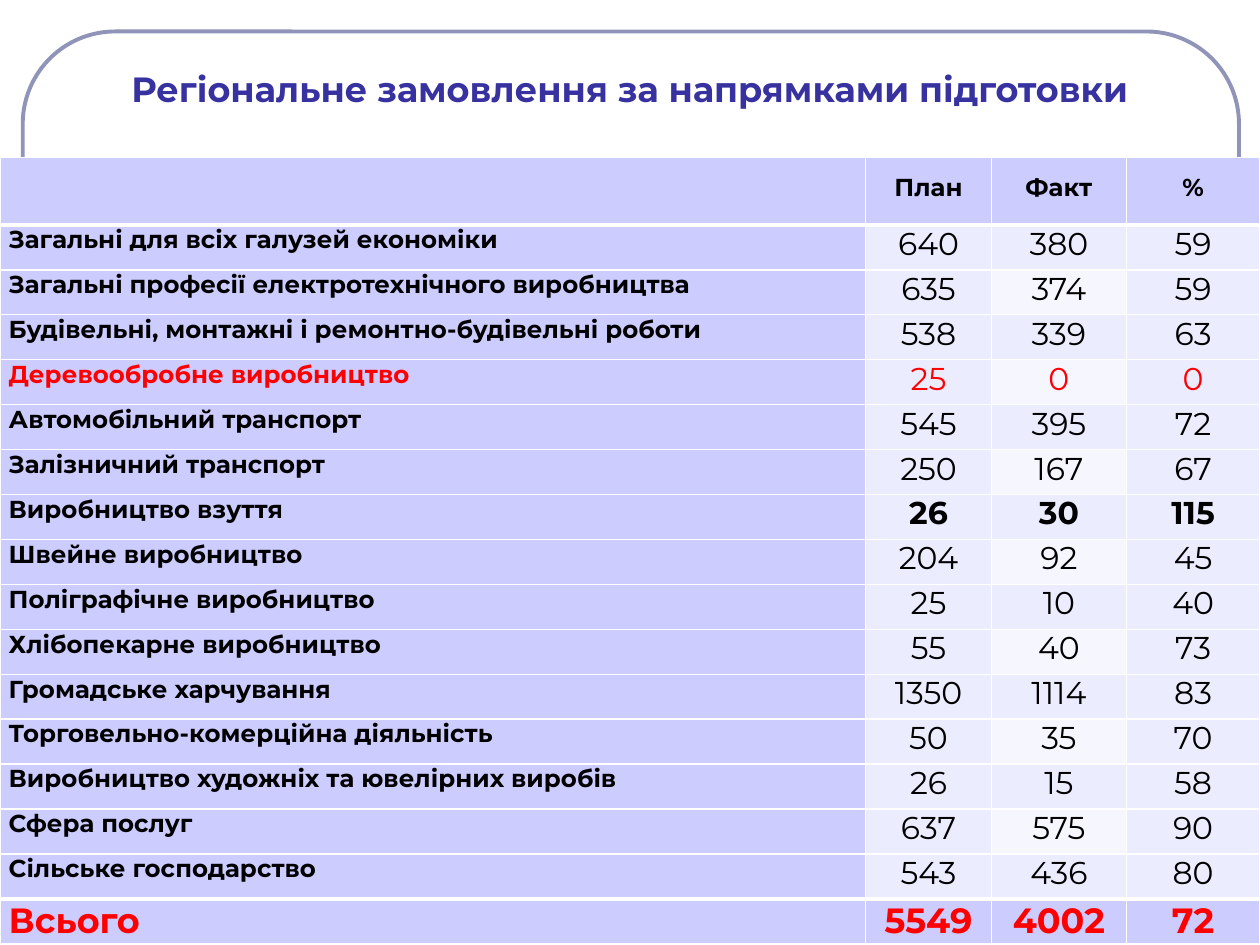
"""Build the slide with the regional training order table."""
from lxml import etree
from pptx import Presentation
from pptx.dml.color import RGBColor
from pptx.enum.shapes import MSO_SHAPE
from pptx.enum.text import MSO_ANCHOR, PP_ALIGN
from pptx.oxml.ns import qn
from pptx.util import Pt

ROUNDED = MSO_SHAPE.ROUNDED_RECTANGLE
BOTTOM = MSO_ANCHOR.BOTTOM
LEFT, CENTER = PP_ALIGN.LEFT, PP_ALIGN.CENTER

FONT = "Montserrat"
WHITE, BLACK, RED, INDIGO = "FFFFFF", "000000", "FF0000", "3732A0"
FRAME, LILAC, PALE, PALEST = "9094B8", "CCCCFF", "ECECFF", "F6F6FF"

TITLE = "Регіональне замовлення за напрямками підготовки"
ROWS = [
    ("", "План", "Факт", "%"),
    ("Загальні для всіх галузей економіки", 640, 380, 59),
    ("Загальні професії електротехнічного виробництва", 635, 374, 59),
    ("Будівельні, монтажні і ремонтно-будівельні роботи", 538, 339, 63),
    ("Деревообробне виробництво", 25, 0, 0),
    ("Автомобільний транспорт", 545, 395, 72),
    ("Залізничний транспорт", 250, 167, 67),
    ("Виробництво взуття", 26, 30, 115),
    ("Швейне виробництво", 204, 92, 45),
    ("Поліграфічне виробництво", 25, 10, 40),
    ("Хлібопекарне виробництво", 55, 40, 73),
    ("Громадське харчування", 1350, 1114, 83),
    ("Торговельно-комерційна діяльність", 50, 35, 70),
    ("Виробництво художніх та ювелірних виробів", 26, 15, 58),
    ("Сфера послуг", 637, 575, 90),
    ("Сільське господарство", 543, 436, 80),
    ("Всього", 5549, 4002, 72),
]
LAST = len(ROWS) - 1
RED_ROWS = {4, LAST}
BOLD_ROWS = {0, 7, LAST}
COL_WIDTHS = [494.6, 72, 77, 76.4]
TABLE_TOP, HEADER_H, ROW_H = 90, 38.5, 25.7
CELL_MARGINS = {"margin_left": 5, "margin_right": 5, "margin_top": 0, "margin_bottom": 0}


def rgb(value):
    return RGBColor.from_string(value)


def write(p, text, color, align, **font):
    p.alignment = align
    r = p.add_run()
    r.text = str(text)
    for name, value in {"name": FONT, **font}.items():
        setattr(r.font, name, value)
    r.font.color.rgb = rgb(color)


def add_borders(cell, row):
    thick = {"lnT": row in (1, LAST), "lnB": row in (0, LAST - 1)}
    tc_pr = cell._tc.get_or_add_tcPr()
    for i, side in enumerate(("lnL", "lnR", "lnT", "lnB")):
        width = Pt(3 if thick.get(side) else 1)
        ln = etree.Element(qn(f"a:{side}"), w=str(width))
        fill = etree.SubElement(ln, qn("a:solidFill"))
        etree.SubElement(fill, qn("a:srgbClr"), val=WHITE)
        tc_pr.insert(i, ln)


def cell_fill(row, col):
    if col == 0 or row == 0:
        return LILAC
    if row == LAST:
        return LILAC
    return PALEST if col == 2 and row % 2 == 0 else PALE


def cell_size(row, col):
    if row == LAST:
        return 20
    return 14 if row == 0 or col == 0 else 18


def add_frame(s):
    sp = s.shapes.add_shape(ROUNDED, Pt(13), Pt(18), Pt(695), Pt(480))
    sp.adjustments[0] = 0.11
    sp.shadow.inherit = False
    sp.fill.background()
    sp.line.color.rgb = rgb(FRAME)
    sp.line.width = Pt(2.25)


def add_title(s):
    tf = s.shapes.add_textbox(Pt(12), Pt(24), Pt(696), Pt(42)).text_frame
    tf.word_wrap = True
    tf.vertical_anchor = BOTTOM
    write(tf.paragraphs[0], TITLE, INDIGO, CENTER, size=Pt(20), bold=True)


def add_order_table(s):
    height = HEADER_H + LAST * ROW_H
    table = s.shapes.add_table(len(ROWS), len(COL_WIDTHS), Pt(0), Pt(TABLE_TOP),
                               Pt(sum(COL_WIDTHS)), Pt(height)).table
    table.first_row = table.horz_banding = False
    for column, width in zip(table.columns, COL_WIDTHS):
        column.width = Pt(width)
    for row, values in enumerate(ROWS):
        table.rows[row].height = Pt(ROW_H if row else HEADER_H)
        for col, value in enumerate(values):
            cell = table.cell(row, col)
            for name, margin in CELL_MARGINS.items():
                setattr(cell, name, Pt(margin))
            cell.fill.solid()
            cell.fill.fore_color.rgb = rgb(cell_fill(row, col))
            add_borders(cell, row)
            if value == "":
                continue
            p = cell.text_frame.paragraphs[0]
            if row == 0:
                p.line_spacing = 1.5
            write(p, value, RED if row in RED_ROWS else BLACK,
                  CENTER if col else LEFT, size=Pt(cell_size(row, col)),
                  bold=col == 0 or row in BOLD_ROWS)


def main():
    prs = Presentation()
    prs.slide_width, prs.slide_height = Pt(720), Pt(540)
    s = prs.slides.add_slide(prs.slide_layouts[6])
    add_frame(s)
    add_title(s)
    add_order_table(s)
    prs.save("out.pptx")


if __name__ == "__main__":
    main()
